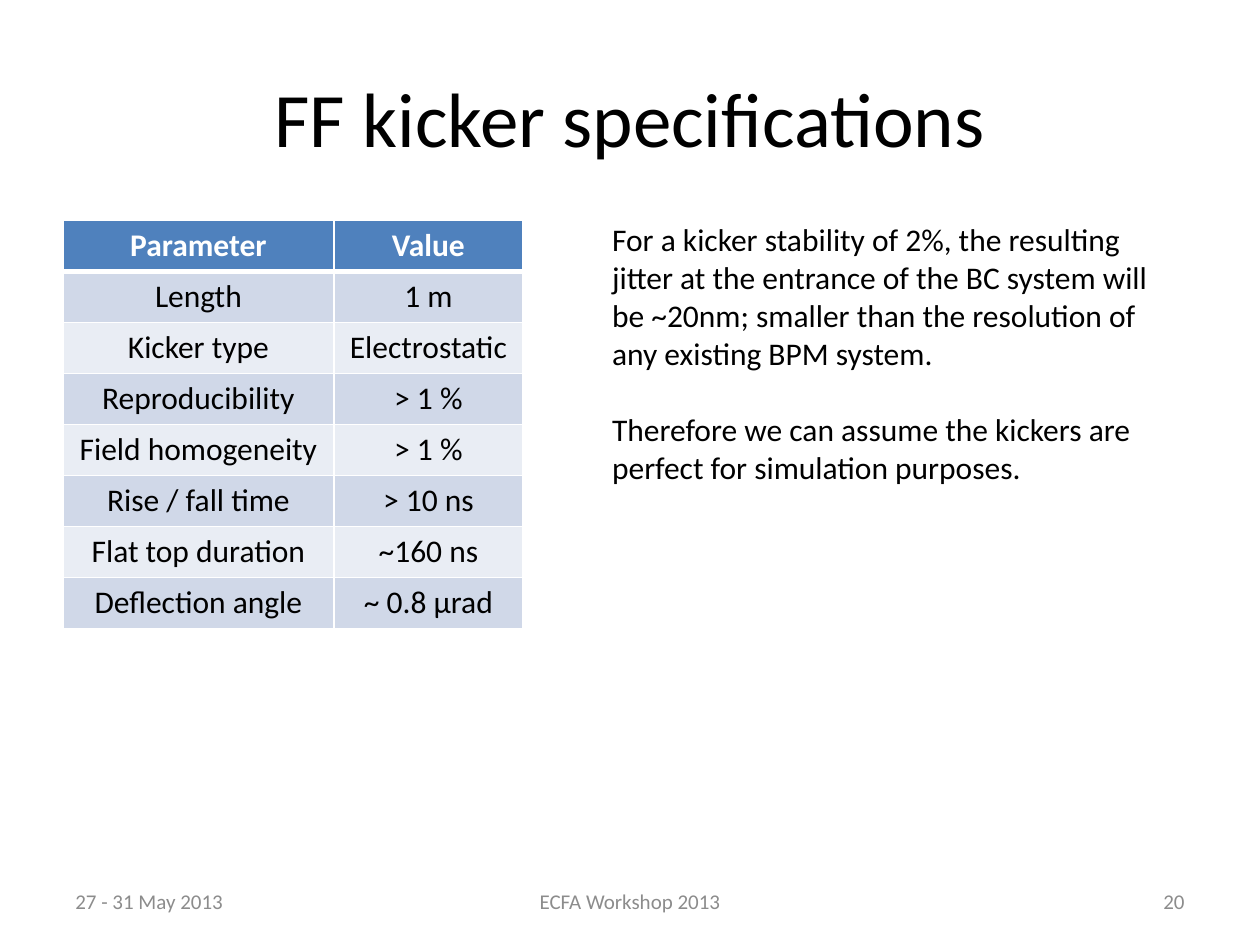
from dataclasses import dataclass

from lxml.etree import SubElement
from pptx import Presentation
from pptx.dml.color import RGBColor
from pptx.enum.text import MSO_ANCHOR, PP_ALIGN
from pptx.oxml.ns import qn
from pptx.util import Inches, Pt

SLIDE_W, SLIDE_H = 10, 7.5
MARGIN = SLIDE_W / 20
FOOTER_TOP, FOOTER_H = 6.95, 0.4
SIDE_FOOTER_W, MID_FOOTER_W = 2.33, 3.17
FONT = "Calibri"
BODY_SIZE = 18
COLORS = {
    "text": "000000",
    "footer": "8C8C8C",
    "header": "4F81BD",
    "odd": "D0D8E8",
    "even": "E9EDF4",
    "white": "FFFFFF",
}


@dataclass
class TextBlock:
    paragraphs: list[str]
    left: float
    top: float
    width: float
    height: float
    size: int
    color: str = "text"
    align: PP_ALIGN = PP_ALIGN.LEFT
    anchor: MSO_ANCHOR = MSO_ANCHOR.MIDDLE
    gap: int = 0


def style(paragraph, size: int, color: str, align: PP_ALIGN, bold: bool = False) -> None:
    paragraph.alignment = align
    font = paragraph.font
    font.name, font.size, font.bold = FONT, Pt(size), bold
    font.color.rgb = RGBColor.from_string(COLORS[color])


def draw_text(slide, block: TextBlock) -> None:
    box = slide.shapes.add_textbox(
        Inches(block.left), Inches(block.top), Inches(block.width), Inches(block.height)
    )
    frame = box.text_frame
    frame.word_wrap = True
    frame.vertical_anchor = block.anchor
    for i, text in enumerate(block.paragraphs):
        paragraph = frame.paragraphs[0] if i == 0 else frame.add_paragraph()
        paragraph.text = text
        paragraph.space_before = Pt(block.gap if i else 0)
        style(paragraph, block.size, block.color, block.align)


def set_borders(cell, bottom: int) -> None:
    properties = cell._tc.get_or_add_tcPr()
    for side, width in {"L": 1, "R": 1, "T": 1, "B": bottom}.items():
        line = SubElement(properties, qn(f"a:ln{side}"), w=str(Pt(width)))
        fill = SubElement(line, qn("a:solidFill"))
        SubElement(fill, qn("a:srgbClr"), val=COLORS["white"])


def draw_table(slide, rows: list[tuple[str, str]], left: float, top: float,
               col_widths: list[float], row_height: float) -> None:
    table = slide.shapes.add_table(
        len(rows), len(col_widths), Inches(left), Inches(top),
        Inches(sum(col_widths)), Inches(row_height * len(rows)),
    ).table
    for column, width in zip(table.columns, col_widths):
        column.width = Inches(width)
    for r, values in enumerate(rows):
        is_header = r == 0
        band = "header" if is_header else ("odd" if r % 2 else "even")
        for c, value in enumerate(values):
            cell = table.cell(r, c)
            cell.text = value
            style(cell.text_frame.paragraphs[0], BODY_SIZE,
                  "white" if is_header else "text", PP_ALIGN.CENTER, is_header)
            # Borders come before the fill in the cell properties
            set_borders(cell, bottom=3 if is_header else 1)
            cell.fill.solid()
            cell.fill.fore_color.rgb = RGBColor.from_string(COLORS[band])


SPECIFICATIONS = [
    ("Parameter", "Value"),
    ("Length", "1 m"),
    ("Kicker type", "Electrostatic"),
    ("Reproducibility", "> 1 %"),
    ("Field homogeneity", "> 1 %"),
    ("Rise / fall time", "> 10 ns"),
    ("Flat top duration", "~160 ns"),
    ("Deflection angle", "~ 0.8 μrad"),
]

TITLE = TextBlock(["FF kicker specifications"], MARGIN, 0.3,
                  SLIDE_W - 2 * MARGIN, 1.25, 44, align=PP_ALIGN.CENTER)

CONCLUSIONS = TextBlock(
    [
        "For a kicker stability of 2%, the resulting jitter at the entrance of the BC "
        "system will be ~20nm; smaller than the resolution of any existing BPM system.",
        "Therefore we can assume the kickers are perfect for simulation purposes.",
    ],
    4.76, 1.7, 4.57, 2.22, BODY_SIZE, anchor=MSO_ANCHOR.TOP, gap=22,
)

# Footer text, left edge, width, alignment
FOOTERS = [
    ("27 - 31 May 2013", MARGIN, SIDE_FOOTER_W, PP_ALIGN.LEFT),
    ("ECFA Workshop 2013", (SLIDE_W - MID_FOOTER_W) / 2, MID_FOOTER_W, PP_ALIGN.CENTER),
    ("20", SLIDE_W - MARGIN - SIDE_FOOTER_W, SIDE_FOOTER_W, PP_ALIGN.RIGHT),
]


def main() -> None:
    presentation = Presentation()
    presentation.slide_width = Inches(SLIDE_W)
    presentation.slide_height = Inches(SLIDE_H)
    slide = presentation.slides.add_slide(presentation.slide_layouts[6])

    # Title, table and conclusions
    draw_text(slide, TITLE)
    draw_table(slide, SPECIFICATIONS, MARGIN, 1.75, [2.15, 1.5], 0.405)
    draw_text(slide, CONCLUSIONS)

    # Footer line
    for text, left, width, align in FOOTERS:
        draw_text(slide, TextBlock([text], left, FOOTER_TOP, width, FOOTER_H,
                                   12, "footer", align))

    presentation.save("out.pptx")


if __name__ == "__main__":
    main()
